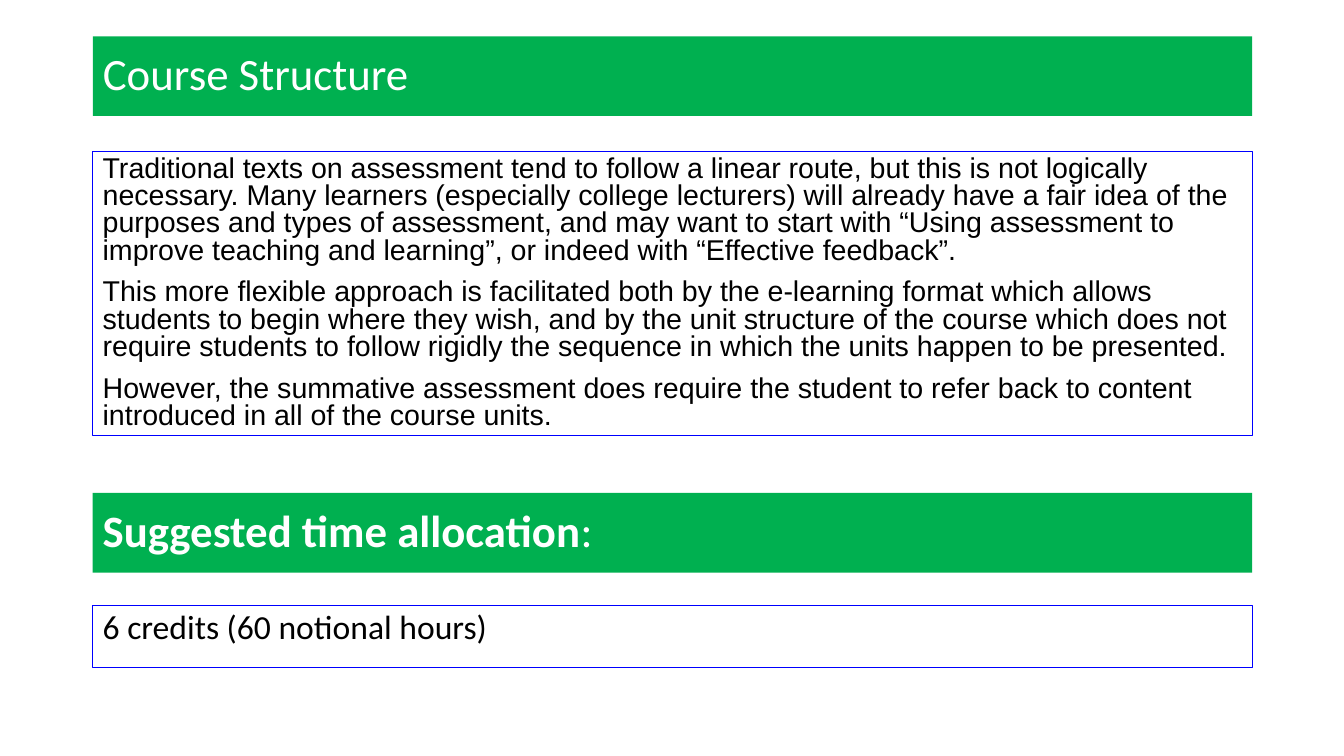
import dataclasses

import pptx
import pptx.dml.color
import pptx.enum.shapes
import pptx.enum.text
import pptx.util

# Slide size in inches; the blocks share one column
SLIDE_WIDTH, SLIDE_HEIGHT = 13.33, 7.5
COLUMN_LEFT, COLUMN_WIDTH = 0.92, 11.5
GREEN, BLUE, WHITE, BLACK = "00B050", "0000FF", "FFFFFF", "000000"


@dataclasses.dataclass(frozen=True)
class Phrase:
    text: str
    bold: bool = False


@dataclasses.dataclass(frozen=True)
class Style:
    font: str
    size: float
    color: str
    line_spacing: float
    space_before: float
    anchor: pptx.enum.text.MSO_ANCHOR
    fill: str | None = None
    outline: str | None = None


@dataclasses.dataclass(frozen=True)
class Block:
    top: float
    height: float
    style: Style
    paragraphs: list[list[Phrase]]


# Styles
MIDDLE, TOP = pptx.enum.text.MSO_ANCHOR.MIDDLE, pptx.enum.text.MSO_ANCHOR.TOP
HEADING = Style("Calibri", 32, WHITE, 0.9, 0, MIDDLE, fill=GREEN)
DISCUSSION = Style("Arial", 20.4, BLACK, 0.8, 10, TOP, outline=BLUE)
CREDITS = Style("Calibri", 24, BLACK, 0.9, 10, TOP, outline=BLUE)

# Content
COURSE_STRUCTURE = Block(0.36, 0.79, HEADING, [[Phrase("Course Structure")]])
DETAILS = [
    Block(1.5, 2.82, DISCUSSION, [
        [Phrase("Traditional texts on assessment tend to follow a linear route, but this "
                "is not logically necessary. Many learners (especially college lecturers) "
                "will already have a fair idea of the purposes and types of assessment, "
                "and may want to start with “Using assessment to improve teaching and "
                "learning”, or indeed with “Effective feedback”.")],
        [Phrase("This more flexible approach is facilitated both by the e-learning format "
                "which allows students to begin where they wish, and by the unit structure "
                "of the course which does not require students to follow rigidly the "
                "sequence in which the units happen to be presented.")],
        [Phrase("However, the summative assessment does require the student to refer back "
                "to content introduced in all of the course units.")],
    ]),
    Block(4.89, 0.79, HEADING, [[Phrase("Suggested time allocation", True), Phrase(":")]]),
    Block(6.01, 0.61, CREDITS, [[Phrase("6 credits (60 notional hours)")]]),
]


def rgb(color: str) -> pptx.dml.color.RGBColor:
    return pptx.dml.color.RGBColor.from_string(color)


def apply_format(target: object, values: dict[str, object]) -> None:
    for name, value in values.items():
        setattr(target, name, value)


def write_text(frame, block: Block) -> None:
    style = block.style
    apply_format(frame, {
        "word_wrap": True,
        "auto_size": pptx.enum.text.MSO_AUTO_SIZE.NONE,
        "vertical_anchor": style.anchor,
    })
    for index, phrases in enumerate(block.paragraphs):
        paragraph = frame.add_paragraph() if index else frame.paragraphs[0]
        apply_format(paragraph, {
            "alignment": pptx.enum.text.PP_ALIGN.LEFT,
            "line_spacing": style.line_spacing,
            "space_before": pptx.util.Pt(style.space_before),
        })
        for phrase in phrases:
            run = paragraph.add_run()
            run.text = phrase.text
            apply_format(run.font, {
                "name": style.font,
                "size": pptx.util.Pt(style.size),
                "bold": phrase.bold,
            })
            run.font.color.rgb = rgb(style.color)


def draw_block(shape, block: Block) -> None:
    apply_format(shape, {
        "left": pptx.util.Inches(COLUMN_LEFT),
        "top": pptx.util.Inches(block.top),
        "width": pptx.util.Inches(COLUMN_WIDTH),
        "height": pptx.util.Inches(block.height),
    })
    if block.style.fill:
        shape.fill.solid()
        shape.fill.fore_color.rgb = rgb(block.style.fill)
    else:
        shape.fill.background()
    if block.style.outline:
        shape.line.color.rgb = rgb(block.style.outline)
        shape.line.width = pptx.util.Pt(0.75)
    else:
        shape.line.fill.background()
    write_text(shape.text_frame, block)


def main() -> None:
    presentation = pptx.Presentation()
    presentation.slide_width = pptx.util.Inches(SLIDE_WIDTH)
    presentation.slide_height = pptx.util.Inches(SLIDE_HEIGHT)
    slide = presentation.slides.add_slide(presentation.slide_layouts.get_by_name("Title Only"))

    # Title band
    draw_block(slide.shapes.title, COURSE_STRUCTURE)

    # Discussion, time allocation band and credits
    for block in DETAILS:
        shape = slide.shapes.add_shape(pptx.enum.shapes.MSO_SHAPE.RECTANGLE, 0, 0, 0, 0)
        shape.shadow.inherit = False
        draw_block(shape, block)

    presentation.save("out.pptx")


if __name__ == "__main__":
    main()
